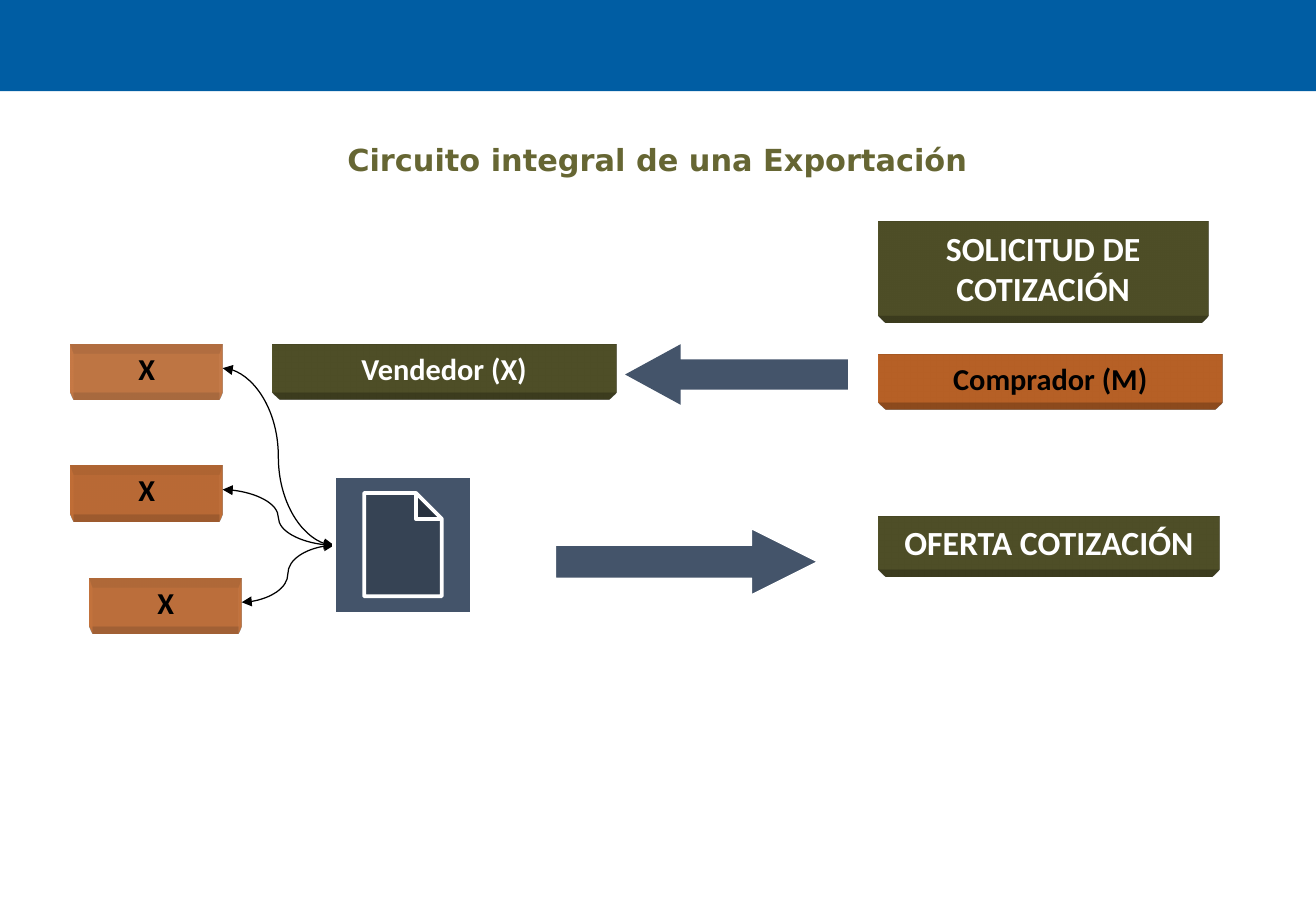
from dataclasses import dataclass

from lxml.etree import SubElement
from pptx import Presentation
from pptx.dml.color import RGBColor
from pptx.enum.shapes import MSO_CONNECTOR as Connector, MSO_SHAPE as Preset
from pptx.enum.text import MSO_ANCHOR as Anchor, MSO_AUTO_SIZE as AutoSize, PP_ALIGN as Align
from pptx.oxml import parse_xml
from pptx.oxml.ns import qn
from pptx.shapes.autoshape import Shape
from pptx.slide import Slide
from pptx.util import Emu, Pt

PX = 9525  # 96 px to the inch
NS = 'xmlns:a="http://schemas.openxmlformats.org/drawingml/2006/main"'


@dataclass(frozen=True)
class Theme:
    header: str = "005DA3"
    olive: str = "666633"
    orange: str = "ED7D31"
    slate: str = "44546A"
    white: str = "FFFFFF"
    black: str = "000000"
    body_font: str = "Calibri"
    title_font: str = "DejaVu Sans"
    large: int = 20
    medium: int = 18


THEME = Theme()


@dataclass(frozen=True)
class Box:
    left: int
    top: int
    width: int
    height: int


@dataclass(frozen=True)
class Block:
    box: Box
    text: str
    fill: str
    color: str
    size: int = THEME.medium
    opacity: int = 100


@dataclass(frozen=True)
class Figure:
    preset: Preset
    box: Box
    fill: str = THEME.slate
    line_width: float = 0
    adjustments: tuple[float, ...] = ()


BLOCKS = (
    Block(Box(694, 175, 261, 74), "SOLICITUD DE COTIZACIÓN", THEME.olive, THEME.white, THEME.large),
    Block(Box(215, 272, 272, 38), "Vendedor (X)", THEME.olive, THEME.white),
    Block(Box(694, 280, 272, 38), "Comprador (M)", THEME.orange, THEME.black),
    Block(Box(694, 408, 270, 42), "OFERTA COTIZACIÓN", THEME.olive, THEME.white, THEME.large),
)
SUPPLIERS = tuple(
    Block(Box(left, top, 120, 38), "X", THEME.orange, THEME.black, opacity=opacity)
    for left, top, opacity in ((56, 272, 63), (56, 368, 73), (71, 457, 69))
)
HEADER = Figure(Preset.RECTANGLE, Box(0, 0, 1040, 72), THEME.header)
REQUEST_ARROW = Figure(Preset.LEFT_ARROW, Box(494, 272, 176, 48), adjustments=(0.5, 0.917))
OFFER_ARROW = Figure(Preset.RIGHT_ARROW, Box(439, 418, 207, 52), line_width=0.75, adjustments=(0.5, 1))
DOCUMENT = Figure(Preset.ACTION_BUTTON_DOCUMENT, Box(264, 376, 109, 109), line_width=2.25)


def place(box: Box) -> tuple[Emu, ...]:
    return tuple(Emu(length * PX) for length in (box.left, box.top, box.width, box.height))


def write(shape: Shape, text: str, font: str, size: int, color: str) -> None:
    frame = shape.text_frame
    frame_format = {"word_wrap": True, "auto_size": AutoSize.SHAPE_TO_FIT_TEXT,
                    "vertical_anchor": Anchor.TOP}
    for name, value in frame_format.items():
        setattr(frame, name, value)
    paragraph = frame.paragraphs[0]
    paragraph.alignment = Align.CENTER
    run = paragraph.add_run()
    run.text = text
    for name, value in {"name": font, "size": Pt(size), "bold": True}.items():
        setattr(run.font, name, value)
    run.font.color.rgb = RGBColor.from_string(color)


def draw_figure(slide: Slide, figure: Figure) -> Shape:
    shape = slide.shapes.add_shape(figure.preset, *place(figure.box))
    shape.shadow.inherit = False
    shape.fill.solid()
    shape.fill.fore_color.rgb = RGBColor.from_string(figure.fill)
    if figure.line_width:
        shape.line.color.rgb = RGBColor.from_string(THEME.white)
        shape.line.width = Pt(figure.line_width)
    else:
        shape.line.fill.background()
    for index, value in enumerate(figure.adjustments):
        shape.adjustments[index] = value
    return shape


def extrude(shape: Shape, color: str) -> None:
    properties = shape.element.spPr
    properties.append(parse_xml(
        f'<a:scene3d {NS}><a:camera prst="legacyPerspectiveBottom"/>'
        '<a:lightRig rig="legacyFlat3" dir="t"/></a:scene3d>'))
    properties.append(parse_xml(
        f'<a:sp3d {NS} extrusionH="430200" prstMaterial="legacyMatte">'
        '<a:bevelT w="13500" h="13500" prst="angle"/><a:bevelB w="13500" h="13500" prst="angle"/>'
        f'<a:extrusionClr><a:srgbClr val="{color}"/></a:extrusionClr></a:sp3d>'))


def draw_block(slide: Slide, block: Block) -> None:
    shape = draw_figure(slide, Figure(Preset.RECTANGLE, block.box, block.fill))
    if block.opacity < 100:
        color = shape.element.spPr.find(qn("a:solidFill")).find(qn("a:srgbClr"))
        SubElement(color, qn("a:alpha"), val=str(block.opacity * 1000))
    extrude(shape, block.fill)
    write(shape, block.text, THEME.body_font, block.size, block.color)


def draw_link(slide: Slide, source: Box, target: Box) -> None:
    ends = (source.left + source.width, source.top + source.height // 2,
            target.left, target.top + target.height // 2 + 1)
    connector = slide.shapes.add_connector(Connector.CURVE, *(Emu(value * PX) for value in ends))
    connector.line.color.rgb = RGBColor.from_string(THEME.black)
    connector.line.width = Pt(0.75)
    for end in ("a:headEnd", "a:tailEnd"):
        SubElement(connector.line._get_or_add_ln(), qn(end), type="triangle")
    SubElement(connector.element.spPr, qn("a:effectLst"))


def main() -> None:
    presentation = Presentation()
    presentation.slide_width = Emu(1040 * PX)
    presentation.slide_height = Emu(720 * PX)
    slide = presentation.slides.add_slide(presentation.slide_layouts[6])

    # Header and title
    draw_figure(slide, HEADER)
    title = slide.shapes.add_textbox(*place(Box(88, 107, 863, 38)))
    write(title, "Circuito integral de una Exportación", THEME.title_font, THEME.medium, THEME.olive)

    # Parties, suppliers and their documents
    for block in BLOCKS + SUPPLIERS:
        draw_block(slide, block)

    # Links from the suppliers to the offer document
    for supplier in SUPPLIERS:
        draw_link(slide, supplier.box, DOCUMENT.box)

    # Arrows and document button
    for figure in (REQUEST_ARROW, OFFER_ARROW, DOCUMENT):
        draw_figure(slide, figure)

    presentation.save("out.pptx")


if __name__ == "__main__":
    main()
